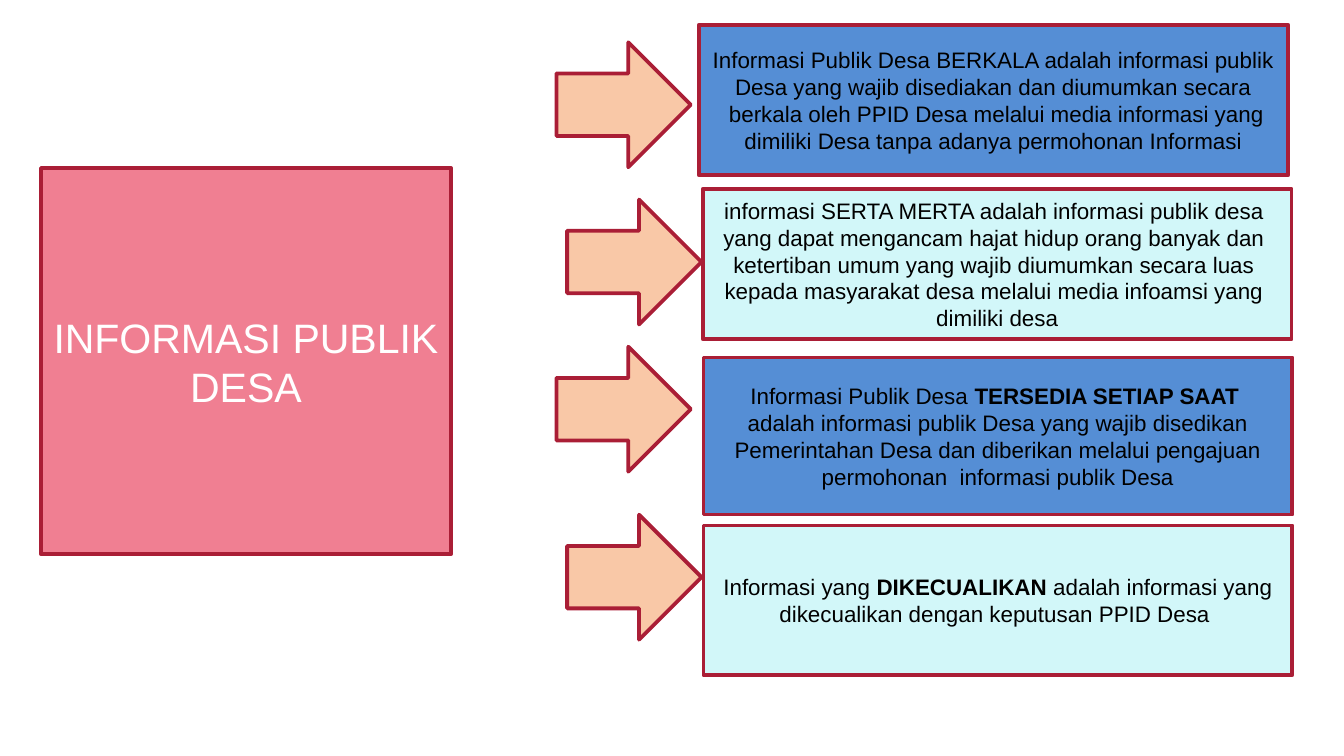
from dataclasses import dataclass

import pptx
import pptx.dml.color
import pptx.enum.shapes
import pptx.enum.text
import pptx.util

PX = 4572  # 200 px to the inch
SHAPE = pptx.enum.shapes.MSO_SHAPE


@dataclass(frozen=True)
class Theme:
    font: str = "Arial"
    title_size: int = 22
    body_size: int = 12
    outline_width: int = 2
    outline: str = "AA1E36"
    title_fill: str = "F07F92"
    title_text: str = "FFFFFF"
    body_text: str = "000000"
    blue: str = "558ED5"
    pale: str = "D2F7F9"
    arrow: str = "F9C8A7"


THEME = Theme()

# Each paragraph is a list of runs; every second run is bold.
PERIODIC = [
    ["Informasi Publik Desa BERKALA adalah informasi publik Desa yang wajib disediakan dan diumumkan secara"],
    [" berkala oleh PPID Desa melalui media informasi yang dimiliki Desa tanpa adanya permohonan Informasi"],
]
IMMEDIATE = [
    ["informasi SERTA MERTA adalah informasi publik desa "],
    ["yang dapat mengancam hajat hidup orang banyak dan "],
    ["ketertiban umum yang wajib diumumkan secara luas "],
    ["kepada masyarakat desa melalui media infoamsi yang "],
    ["dimiliki desa"],
]
ANYTIME = [
    ["Informasi Publik Desa ", "TERSEDIA SETIAP SAAT "],
    ["adalah informasi publik Desa yang wajib disedikan"],
    [" Pemerintahan Desa dan diberikan melalui pengajuan "],
    ["permohonan  informasi publik Desa"],
]
EXEMPT = [
    ["Informasi yang ", "DIKECUALIKAN", " adalah informasi yang"],
    ["dikecualikan dengan keputusan PPID Desa "],
]

# Category text, fill, box (left, top, width, height), arrow (left, top)
CATEGORIES = [
    (PERIODIC, THEME.blue, (1040, 37, 877, 224), (828, 63)),
    (IMMEDIATE, THEME.pale, (1046, 281, 876, 224), (844, 297)),
    (ANYTIME, THEME.blue, (1047, 532, 876, 234), (828, 516)),
    (EXEMPT, THEME.pale, (1047, 782, 876, 223), (844, 766)),
]
ARROW_SIZE = (200, 186)


def rgb(code):
    return pptx.dml.color.RGBColor.from_string(code)


def add_outlined(slide, preset, box, fill):
    shape = slide.shapes.add_shape(preset, *(length * PX for length in box))
    shape.shadow.inherit = False
    shape.fill.solid()
    shape.fill.fore_color.rgb = rgb(fill)
    shape.line.color.rgb = rgb(THEME.outline)
    shape.line.width = pptx.util.Pt(THEME.outline_width)
    return shape


def add_text_box(slide, box, fill, paragraphs, size, color):
    frame = add_outlined(slide, SHAPE.RECTANGLE, box, fill).text_frame
    frame.word_wrap = True
    frame.vertical_anchor = pptx.enum.text.MSO_ANCHOR.MIDDLE
    frame.margin_left = frame.margin_right = 15 * PX
    frame.margin_top = frame.margin_bottom = 8 * PX
    for index, runs in enumerate(paragraphs):
        paragraph = frame.add_paragraph() if index else frame.paragraphs[0]
        paragraph.alignment = pptx.enum.text.PP_ALIGN.CENTER
        paragraph.font.name = THEME.font
        paragraph.font.size = pptx.util.Pt(size)
        paragraph.font.color.rgb = rgb(color)
        for position, text in enumerate(runs):
            run = paragraph.add_run()
            run.text = text
            if position % 2:
                run.font.bold = True


def main():
    presentation = pptx.Presentation()
    presentation.slide_width = 2000 * PX
    presentation.slide_height = 1125 * PX
    slide = presentation.slides.add_slide(presentation.slide_layouts[6])

    add_text_box(slide, (61, 250, 610, 575), THEME.title_fill,
                 [["INFORMASI PUBLIK DESA"]], THEME.title_size, THEME.title_text)
    for paragraphs, fill, box, _ in CATEGORIES:
        add_text_box(slide, box, fill, paragraphs, THEME.body_size, THEME.body_text)
    for *_, arrow_corner in CATEGORIES:
        add_outlined(slide, SHAPE.RIGHT_ARROW, arrow_corner + ARROW_SIZE, THEME.arrow)

    presentation.save("out.pptx")


if __name__ == "__main__":
    main()
